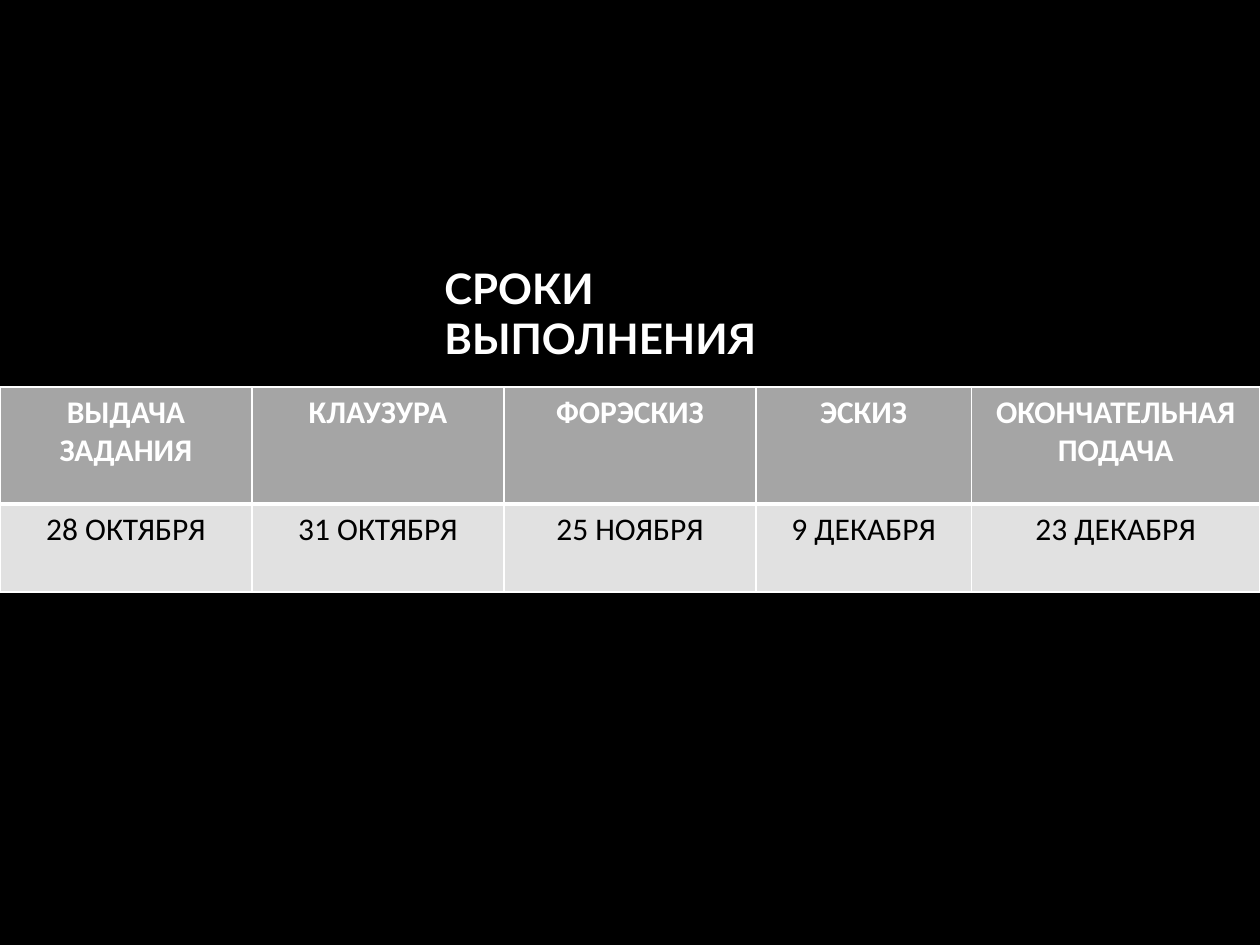
import pptx
import pptx.dml.color
import pptx.enum.text
import pptx.oxml
import pptx.oxml.ns
import pptx.util

Cm = pptx.util.Cm
Pt = pptx.util.Pt

WHITE, BLACK = "FFFFFF", "000000"
HEADER_FILL, DATE_FILL = "A5A5A5", "E1E1E1"
COLUMN_WIDTHS = [5.08, 5.08, 5.08, 4.34, 5.82]
ROW_HEIGHTS = [2.36, 1.77]
STAGES = [
    ("ВЫДАЧА ЗАДАНИЯ", "28 ОКТЯБРЯ"),
    ("КЛАУЗУРА", "31 ОКТЯБРЯ"),
    ("ФОРЭСКИЗ", "25 НОЯБРЯ"),
    ("ЭСКИЗ", "9 ДЕКАБРЯ"),
    ("ОКОНЧАТЕЛЬНАЯ ПОДАЧА", "23 ДЕКАБРЯ"),
]


def color(value):
    return pptx.dml.color.RGBColor.from_string(value)


def format_text(frame, font, size, ink, bold):
    for para in frame.paragraphs:
        for span in para.runs:
            span.font.name = font
            span.font.size = Pt(size)
            span.font.bold = bold
            span.font.color.rgb = color(ink)


def add_title(page, text):
    box = page.shapes.add_textbox(Cm(8.71), Cm(5.16), Cm(7.98), Cm(1.27))
    frame = box.text_frame
    frame.word_wrap = True
    frame.text = text
    format_text(frame, "Lato", 24, WHITE, True)


def set_borders(cell, widths):
    # Border lines must come before the fill in the cell properties
    properties = cell._tc.get_or_add_tcPr()
    for index, (side, width) in enumerate(widths.items()):
        line = pptx.oxml.parse_xml(
            f'<a:ln{side} {pptx.oxml.ns.nsdecls("a")} w="{Pt(width)}">'
            f'<a:solidFill><a:srgbClr val="{WHITE}"/></a:solidFill></a:ln{side}>'
        )
        properties.insert(index, line)


def fill_cell(cell, text, fill, ink, bold, borders):
    cell.text_frame.text = text
    cell.text_frame.paragraphs[0].alignment = pptx.enum.text.PP_ALIGN.CENTER
    format_text(cell.text_frame, "Calibri", 18, ink, bold)
    cell.fill.solid()
    cell.fill.fore_color.rgb = color(fill)
    set_borders(cell, borders)


def add_schedule(page):
    table = page.shapes.add_table(
        len(ROW_HEIGHTS), len(STAGES), Cm(0), Cm(7.8),
        Cm(sum(COLUMN_WIDTHS)), Cm(sum(ROW_HEIGHTS)),
    ).table
    for column, width in zip(table.columns, COLUMN_WIDTHS):
        column.width = Cm(width)
    for row, height in zip(table.rows, ROW_HEIGHTS):
        row.height = Cm(height)

    # A thicker line separates the stages from their dates
    header_borders = {"L": 1, "R": 1, "T": 1, "B": 3}
    date_borders = {"L": 1, "R": 1, "T": 3, "B": 1}
    for index, (stage, date) in enumerate(STAGES):
        fill_cell(table.cell(0, index), stage, HEADER_FILL, WHITE, True, header_borders)
        fill_cell(table.cell(1, index), date, DATE_FILL, BLACK, False, date_borders)


def main():
    deck = pptx.Presentation()
    deck.slide_width, deck.slide_height = Cm(25.4), Cm(19.05)
    page = deck.slides.add_slide(deck.slide_layouts[6])

    # Black background
    page.background.fill.solid()
    page.background.fill.fore_color.rgb = color(BLACK)

    add_title(page, "СРОКИ ВЫПОЛНЕНИЯ")
    add_schedule(page)
    deck.save("out.pptx")


if __name__ == "__main__":
    main()
